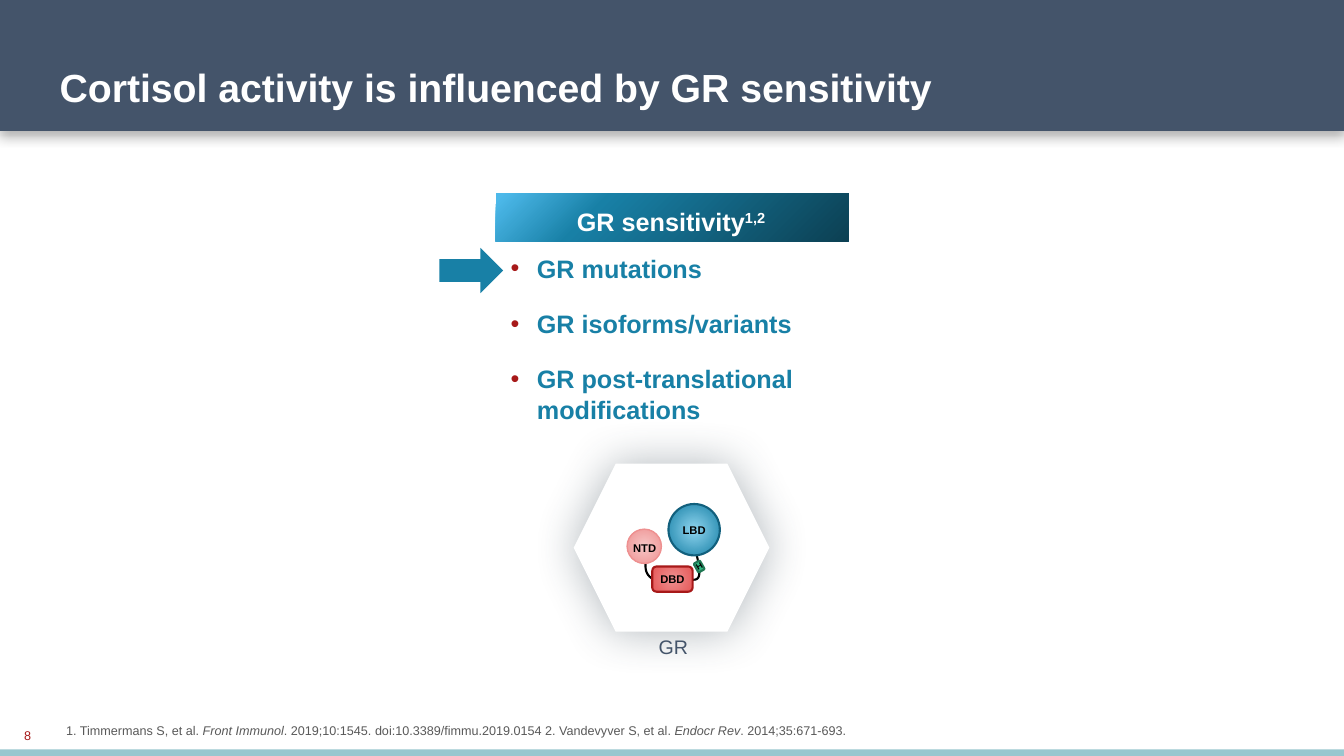
from dataclasses import dataclass
from pptx import Presentation
from pptx.dml.color import RGBColor
from pptx.enum.shapes import MSO_SHAPE as Kind
from pptx.enum.text import MSO_ANCHOR as Anchor, MSO_AUTO_SIZE as Fit, PP_ALIGN as Align
from pptx.oxml import parse_xml
from pptx.oxml.ns import nsdecls, qn
from pptx.util import Inches, Pt

CELL = Inches(1) // 12
COLS, ROWS = 160, 90


@dataclass(frozen=True)
class Theme:
    font: str = "Arial"
    white: str = "FFFFFF"
    black: str = "000000"
    slate: str = "44546A"
    aqua: str = "99C7CF"
    gray: str = "595959"
    shade: str = "3C4C58"
    red: str = "A71919"
    rose: str = "E65959"
    pink: str = "EE9090"
    blush: str = "F7C8C8"
    blue: str = "1880A6"
    sky: str = "4DB9EA"
    pale: str = "8FD5EF"
    deep: str = "0C4053"
    navy: str = "12607D"
    green: str = "2FB780"
    pine: str = "1F7753"
    title: int = 28
    body: int = 18
    label: int = 14
    note: int = 9
    small: int = 8
    tiny: int = 6


T = Theme()


@dataclass(frozen=True)
class Box:
    x: float
    y: float
    w: float
    h: float

    def sub(self, x, y, w, h):
        return Box(self.x + x, self.y + y, w, h)

    def emu(self):
        return [round(v * CELL) for v in (self.x, self.y, self.w, self.h)]


def add_run(para, text, size, color, bold=False, italic=False, raised=False):
    run = para.add_run()
    run.text = text
    font = run.font
    font.name, font.size, font.bold, font.italic = T.font, Pt(size), bold, italic
    font.color.rgb = RGBColor.from_string(color)
    if raised:
        run._r.get_or_add_rPr().set("baseline", "30000")


def set_frame(frame, anchor=Anchor.TOP, wrap=True):
    frame.auto_size = Fit.NONE
    frame.word_wrap = wrap
    frame.vertical_anchor = anchor
    return frame.paragraphs[0]


def add_text(slide, box, anchor=Anchor.TOP, wrap=True, align=Align.LEFT):
    para = set_frame(slide.shapes.add_textbox(*box.emu()).text_frame, anchor, wrap)
    para.alignment = align
    return para


def add_form(slide, kind, box, fill, line=None, width=1.5):
    form = slide.shapes.add_shape(kind, *box.emu())
    form.shadow.inherit = False
    form.fill.solid()
    form.fill.fore_color.rgb = RGBColor.from_string(fill)
    if line:
        form.line.color.rgb = RGBColor.from_string(line)
        form.line.width = Pt(width)
    else:
        form.line.fill.background()
    return form


def add_blend(form, stops, course):
    marks = "".join(
        f'<a:gs pos="{pos * 1000}"><a:srgbClr val="{color}"/></a:gs>' for pos, color in stops)
    props = form._element.spPr
    props.replace(props.find(qn("a:solidFill")), parse_xml(
        f'<a:gradFill {nsdecls("a")} rotWithShape="1"><a:gsLst>{marks}</a:gsLst>{course}</a:gradFill>'))


def add_shade(form, color, alpha, blur, dist, angle):
    form._element.spPr.find(qn("a:effectLst")).append(parse_xml(
        f'<a:outerShdw {nsdecls("a")} blurRad="{Pt(blur)}" dist="{Pt(dist)}" '
        f'dir="{angle * 60000}" algn="ctr" rotWithShape="0"><a:srgbClr val="{color}">'
        f'<a:alpha val="{alpha * 1000}"/></a:srgbClr></a:outerShdw>'))


def move_holder(slide, holder, box):
    holder.left, holder.top, holder.width, holder.height = box.emu()
    slide.shapes._spTree.append(holder._element)
    return holder.text_frame


def add_banner(slide, box):
    bar = add_form(slide, Kind.RECTANGLE, box, T.slate)
    add_shade(bar, T.black, 30, 8, 4, 90)
    frame = move_holder(slide, slide.shapes.title, box.sub(5.9, 1.1, 150.4, 12.7))
    para = set_frame(frame, Anchor.BOTTOM)
    para.alignment, para.line_spacing = Align.LEFT, 0.9
    add_run(para, "Cortisol activity is influenced by GR sensitivity", T.title, T.white, True)


def add_footer(slide, box):
    add_form(slide, Kind.RECTANGLE, box.sub(0, 7.6, box.w, 0.8), T.aqua)
    page = add_text(slide, box.sub(0.1, 3.5, 4.8, 4.8), Anchor.MIDDLE, align=Align.RIGHT)
    add_run(page, "8", T.note, T.red)
    refs = add_text(slide, box.sub(6.7, 0, 132.5, 6.84), Anchor.BOTTOM)
    for text, italic in (
            ("1. Timmermans S, et al. ", False),
            ("Front Immunol", True),
            (". 2019;10:1545. doi:10.3389/fimmu.2019.0154 2. Vandevyver S, et al. ", False),
            ("Endocr Rev", True),
            (". 2014;35:671-693.", False)):
        add_run(refs, text, T.note, T.gray, italic=italic)


def add_list(slide, holder, box):
    frame = move_holder(slide, holder, box)
    head = set_frame(frame)
    props = head._p.get_or_add_pPr()
    props.set("marL", "0")
    props.set("indent", "0")
    props.append(parse_xml(f'<a:buNone {nsdecls("a")}/>'))
    head.alignment, head.space_before, head.line_spacing = Align.CENTER, Pt(0), 1.0
    add_run(head, "GR sensitivity", T.body, T.white, True)
    add_run(head, "1,2", T.body, T.white, True, raised=True)
    for text, gap in (("GR mutations", 12), ("GR isoforms/variants", 18),
                      ("GR post-translational modifications", 18)):
        para = frame.add_paragraph()
        props = para._p.get_or_add_pPr()
        props.set("marL", str(Inches(0.26)))
        props.set("indent", str(-Inches(0.26)))
        for mark in (f'<a:buClr {nsdecls("a")}><a:srgbClr val="{T.red}"/></a:buClr>',
                     f'<a:buFont {nsdecls("a")} typeface="{T.font}"/>',
                     f'<a:buChar {nsdecls("a")} char="•"/>'):
            props.append(parse_xml(mark))
        para.alignment, para.space_before, para.line_spacing = Align.LEFT, Pt(gap), 1.0
        add_run(para, text, T.body, T.blue, True)


def add_curve(slide, box, knots, turn=0):
    spots = []
    for step in range(17):
        t = step / 16
        shares = ((1 - t) ** 3, 3 * t * (1 - t) ** 2, 3 * t * t * (1 - t), t ** 3)
        x, y = (sum(s * k[axis] for s, k in zip(shares, knots)) for axis in (0, 1))
        spots.append((round((box.x + x) * CELL), round((box.y + y) * CELL)))
    pen = slide.shapes.build_freeform(*spots[0])
    pen.add_line_segments(spots[1:], close=False)
    curve = pen.convert_to_shape()
    curve.shadow.inherit = False
    curve.fill.background()
    curve.line.color.rgb = RGBColor.from_string(T.black)
    curve.line.width = Pt(1.5)
    curve.rotation = turn


def add_model(slide, box):
    hexa = add_form(slide, Kind.HEXAGON, box, T.white)
    add_shade(hexa, T.shade, 40, 33, 0, 0)
    add_curve(slide, box, ((8.76, 10.92), (8.4, 12.12), (8.4, 13.32), (9.6, 13.8)))
    add_curve(slide, box, ((14.28, 10.68), (15.48, 13.32), (15.48, 14.04), (13.8, 13.8)), 11.8)
    glow = ('<a:path path="circle"><a:fillToRect l="50000" t="50000" r="50000" b="50000"/>'
            '</a:path>')
    for text, kind, place, fill, line, width, size, turn in (
            ("LBD", Kind.OVAL, (11.28, 4.8, 6.12, 6.12),
             ((0, T.pale), (96, T.blue)), T.navy, 1.5, T.small, 0),
            ("", Kind.OVAL, (6.36, 7.8, 4.08, 4.08),
             ((0, T.blush), (100, T.pink)), T.pink, 1, T.small, 0),
            ("DBD", Kind.ROUNDED_RECTANGLE, (9.36, 12.24, 4.8, 3),
             ((0, T.pink), (100, T.rose)), T.red, 1.5, T.small, 0),
            ("H", Kind.ROUNDED_RECTANGLE, (14.52, 11.64, 0.84, 1.2),
             (), T.pine, 1.5, T.tiny, 330.6)):
        form = add_form(slide, kind, box.sub(*place), T.green, line, width)
        form.rotation = turn
        if fill:
            add_blend(form, fill, glow)
        if text:
            frame = form.text_frame
            frame.margin_left = frame.margin_right = 0
            para = set_frame(frame, Anchor.MIDDLE)
            para.alignment = Align.CENTER
            add_run(para, text, size, T.black, True)
    for text, place, size, color, bold in (
            ("NTD", (5.88, 8.64, 5.16, 2.88), T.small, T.black, True),
            ("GR", (8.88, 19.8, 6, 4.08), T.label, T.slate, False)):
        para = add_text(slide, box.sub(*place), wrap=False, align=Align.CENTER)
        add_run(para, text, size, color, bold)


def add_panel(slide, box):
    card = add_form(slide, Kind.SNIP_2_DIAG_RECTANGLE, box, T.white)
    card.adjustments[0], card.adjustments[1] = 0.08, 0
    head = add_form(slide, Kind.RECTANGLE, box.sub(0, 0, box.w, 5.7), T.blue)
    add_blend(head, ((2, T.sky), (29, T.blue), (100, T.deep)),
              '<a:lin ang="2700000" scaled="0"/>')
    add_list(slide, slide.placeholders[1], box.sub(0.6, 0.9, 40.6, 35.2))
    add_model(slide, box.sub(9.3, 32.2, 23.3, 20))
    add_form(slide, Kind.RIGHT_ARROW, box.sub(-6.7, 6.5, 7.6, 5.4), T.blue)


def main():
    deck = Presentation()
    deck.slide_width, deck.slide_height = COLS * CELL, ROWS * CELL
    slide = deck.slides.add_slide(deck.slide_layouts[1])
    add_banner(slide, Box(0, 0, COLS, 15.6))
    add_footer(slide, Box(0, 81.6, COLS, 8.4))
    add_panel(slide, Box(59, 23, 42, 55.7))
    deck.save("out.pptx")


if __name__ == "__main__":
    main()
